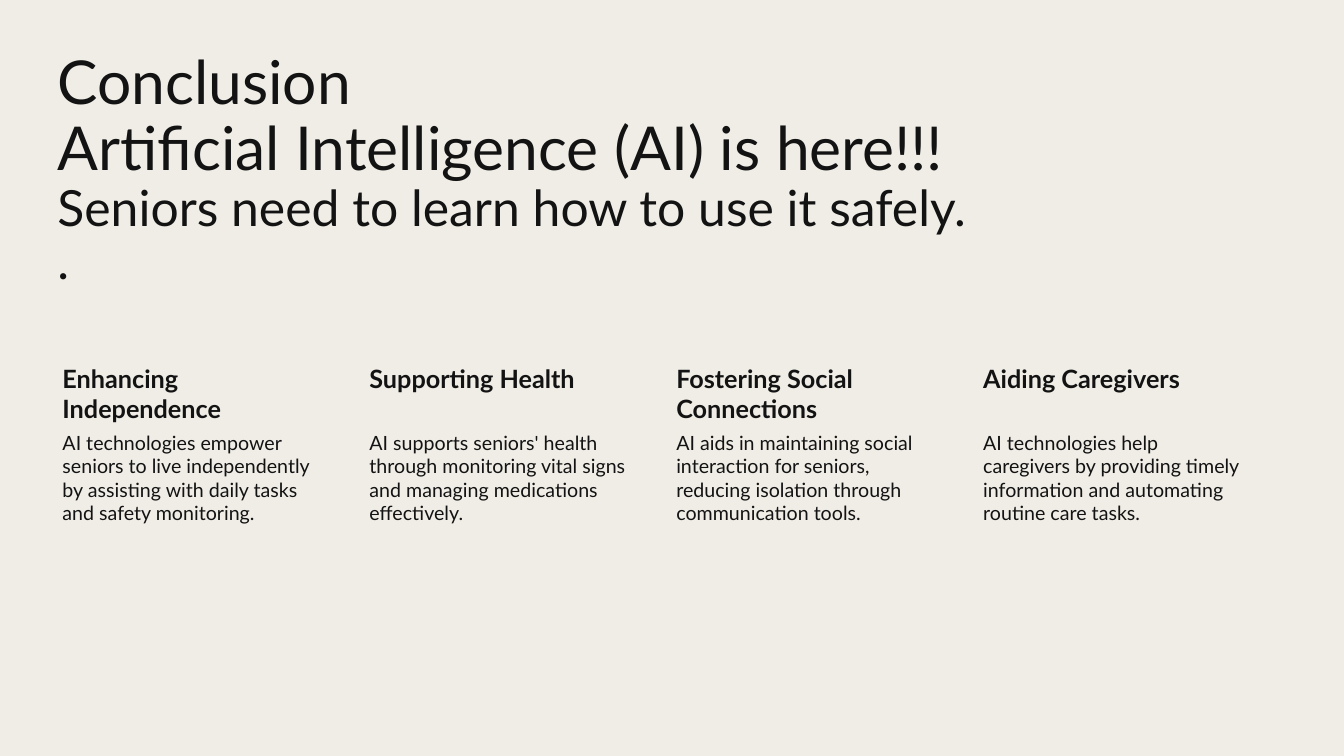
from copy import deepcopy

from pptx import Presentation
from pptx.dml.color import RGBColor
from pptx.enum.text import MSO_ANCHOR, MSO_AUTO_SIZE, PP_ALIGN
from pptx.util import Inches, Pt

FONT = "Lato"
INK = "131313"
PAPER = "F0EDE6"

TITLE_LINES = [
    ("Conclusion", 43.2),
    ("Artificial Intelligence (AI) is here!!!", 43.2),
    ("Seniors need to learn how to use it safely.", 35.6),
    (".", 35.6),
]
BENEFITS = [
    ("Enhancing Independence",
     "AI technologies empower seniors to live independently by assisting "
     "with daily tasks and safety monitoring."),
    ("Supporting Health",
     "AI supports seniors' health through monitoring vital signs and "
     "managing medications effectively."),
    ("Fostering Social Connections",
     "AI aids in maintaining social interaction for seniors, reducing "
     "isolation through communication tools."),
    ("Aiding Caregivers",
     "AI technologies help caregivers by providing timely information and "
     "automating routine care tasks."),
]
LEFT = 0.47
COLUMN_WIDTH = 2.77
COLUMN_PITCH = 3.044
HEADING_TOP, HEADING_HEIGHT = 3.57, 0.68
DETAIL_TOP, DETAIL_HEIGHT = 4.25, 2.42


def rgb(hex_color):
    return RGBColor.from_string(hex_color)


def write_text(frame, lines, bold=False, color=INK, spacing=1.0,
               insets=(0.1, 0.05, 0.1, 0.05)):
    """Write (text, size) lines as one paragraph, parted by line breaks."""
    frame.word_wrap = True
    frame.auto_size = MSO_AUTO_SIZE.NONE
    frame.vertical_anchor = MSO_ANCHOR.TOP
    (frame.margin_left, frame.margin_top,
     frame.margin_right, frame.margin_bottom) = map(Inches, insets)
    paragraph = frame.paragraphs[0]
    paragraph.alignment = PP_ALIGN.LEFT
    paragraph.line_spacing = spacing
    for number, (text, size) in enumerate(lines, start=1):
        run = paragraph.add_run()
        run.text = text
        run.font.name = FONT
        run.font.size = Pt(size)
        run.font.bold = bold
        run.font.color.rgb = rgb(color)
        if number < len(lines):
            paragraph.add_line_break()
            # The break takes the run's format so that line heights agree.
            paragraph._p[-1].append(deepcopy(run._r.rPr))


def add_text(shapes, left, top, width, height, text, size, **text_format):
    box = shapes.add_textbox(Inches(left), Inches(top),
                             Inches(width), Inches(height))
    write_text(box.text_frame, [(text, size)], **text_format)


def add_title(slide):
    title = slide.shapes.title
    title.left, title.top = Inches(LEFT), Inches(0.47)
    title.width, title.height = Inches(11.91), Inches(1.78)
    write_text(title.text_frame, TITLE_LINES, spacing=0.9)


def add_benefit(shapes, left, heading, detail):
    add_text(shapes, left, HEADING_TOP, COLUMN_WIDTH, HEADING_HEIGHT,
             heading, 18, bold=True, insets=(0.15, 0.03, 0.03, 0.03))
    add_text(shapes, left, DETAIL_TOP, COLUMN_WIDTH, DETAIL_HEIGHT,
             detail, 14, insets=(0.15, 0.02, 0.02, 0.02))


def main():
    presentation = Presentation()
    presentation.slide_width = Inches(13.33)
    presentation.slide_height = Inches(7.5)
    slide = presentation.slides.add_slide(presentation.slide_layouts[5])
    slide.background.fill.solid()
    slide.background.fill.fore_color.rgb = rgb(PAPER)

    add_title(slide)
    benefits = slide.shapes.add_group_shape()
    for column, (heading, detail) in enumerate(BENEFITS):
        add_benefit(benefits.shapes, LEFT + column * COLUMN_PITCH,
                    heading, detail)

    presentation.save("out.pptx")


if __name__ == "__main__":
    main()
